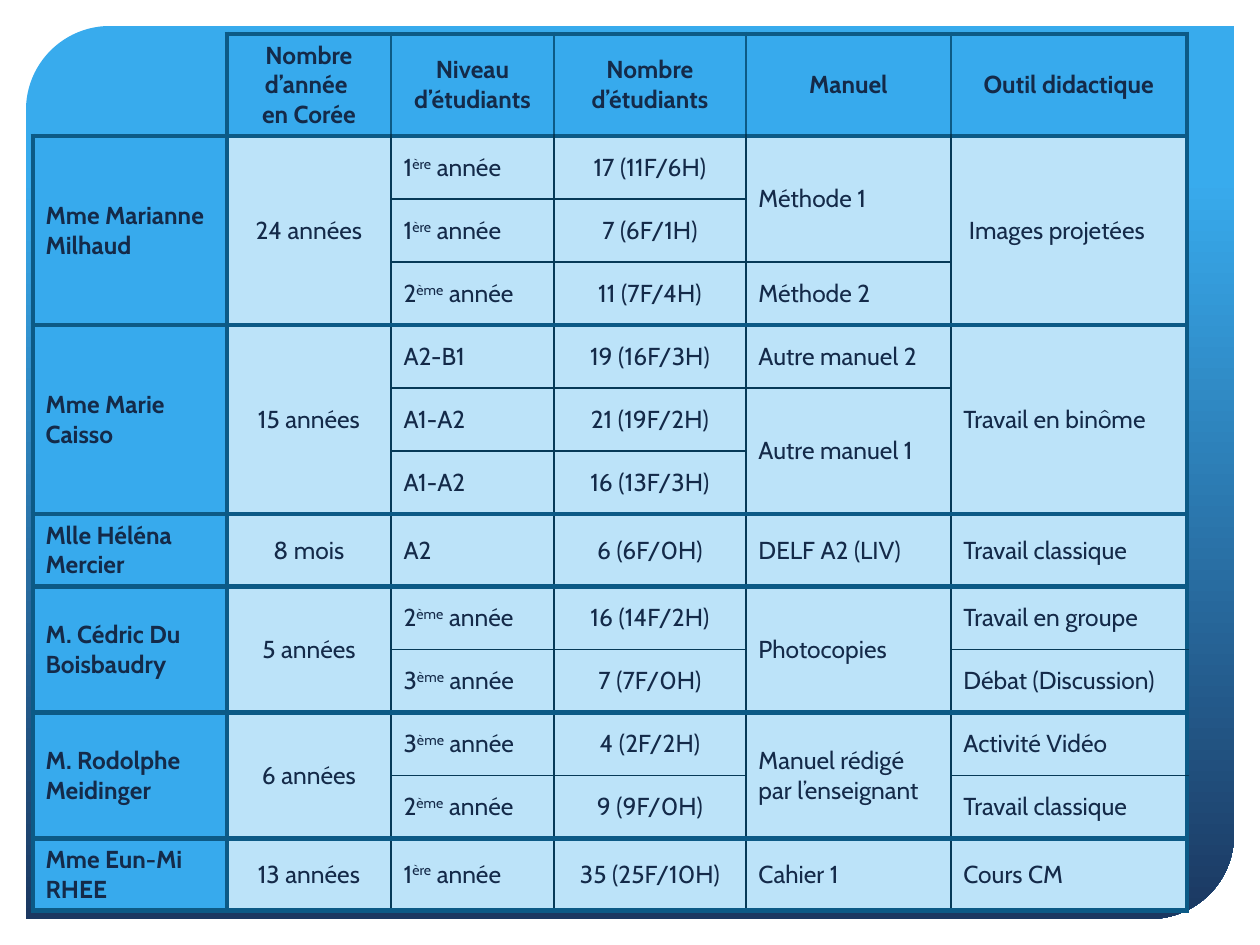
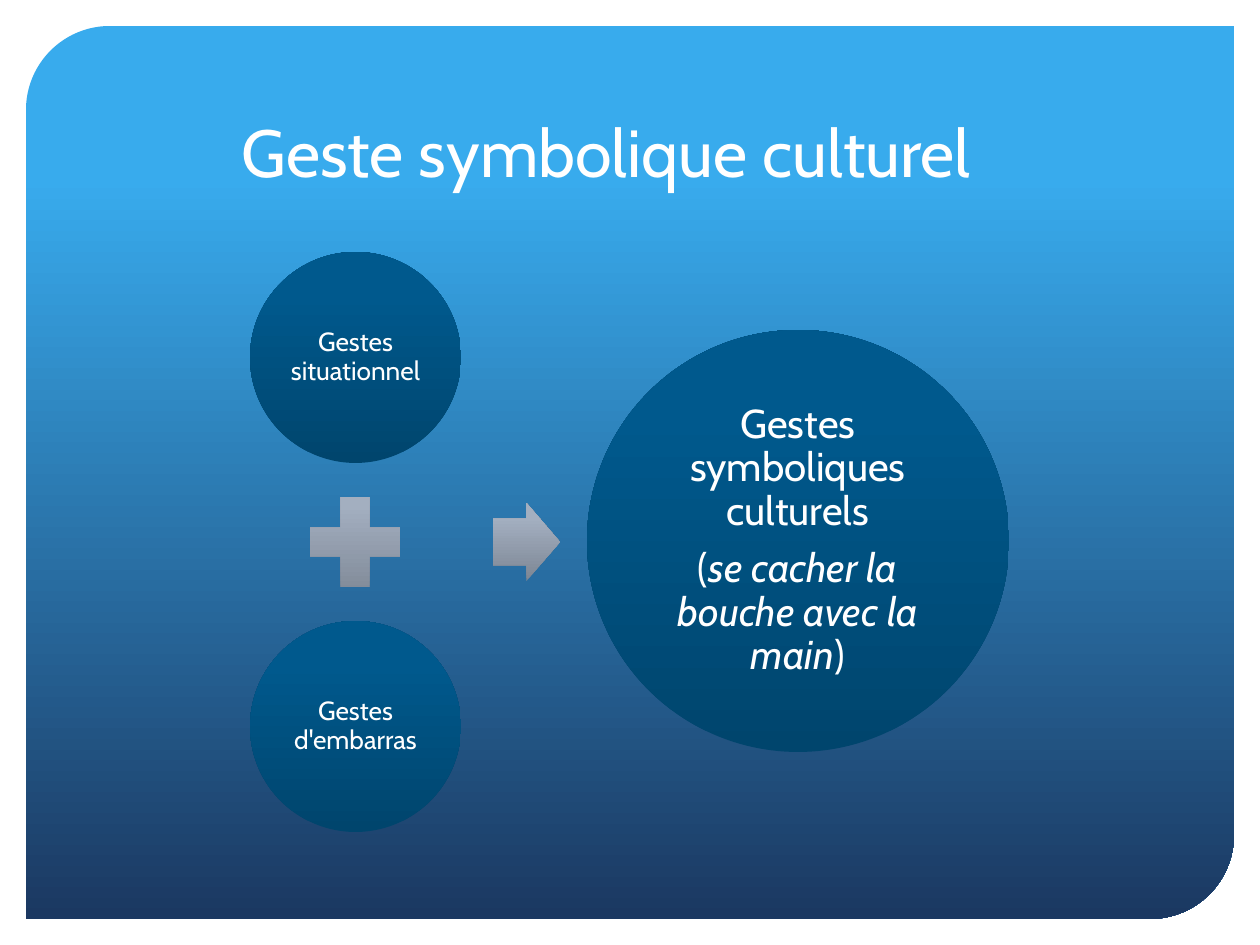
from dataclasses import dataclass
from pptx import Presentation
from pptx.dml.color import RGBColor as Rgb
from pptx.enum.shapes import MSO_SHAPE as Form
from pptx.enum.text import MSO_ANCHOR as Anchor, PP_ALIGN as Align
from pptx.oxml import parse_xml
from pptx.oxml.ns import nsdecls
from pptx.util import Pt

SCALE = 914400 / 126


def px(n):
    return round(n * SCALE)


@dataclass(frozen=True)
class Theme:
    font: str = "Cabin"
    ink: str = "142A49"
    white: str = "FFFFFF"
    thick: tuple = ("0C5A86", 3)
    mid: tuple = ("0C5A86", 1.5)
    thin: tuple = ("063A58", 1)
    head: str = "37AAED"
    body: str = "BCE3F9"
    alpha: int = 45
    # Gradients: angle, then (position, colour) stops
    sky: tuple = (90, (17, "38ABED"), (100, "1B3861"))
    ball: tuple = (270, (0, "00456D"), (80, "00598D"), (100, "005A8E"))
    steel: tuple = (270, (0, "7D8694"), (80, "A3AFC0"), (100, "A3AFC1"))
    title: int = 38
    large: int = 23
    small: int = 15
    cell: int = 14


def write(frame, text, *, font, size, color, bold=False, align=Align.LEFT,
          alt="sup", lead=None, after=0):
    """Lines become paragraphs; parts between | take the alt format."""
    for n, line in enumerate(text.split("\n")):
        para = frame.paragraphs[0] if n == 0 else frame.add_paragraph()
        para.alignment = align
        para.space_after = Pt(after)
        if lead:
            para.line_spacing = lead
        for k, part in enumerate(line.split("|")):
            run = para.add_run()
            run.text = part
            face = run.font
            face.name, face.size, face.bold = font, Pt(size), bold
            face.color.rgb = Rgb.from_string(color)
            if k % 2 and alt == "sup":
                run._r.get_or_add_rPr().set("baseline", "30000")
            elif k % 2:
                face.italic = True


class Deck:
    def __init__(self, theme):
        self.theme = theme
        self.prs = Presentation()
        self.prs.slide_width, self.prs.slide_height = px(1260), px(945)
        self.slide = None

    def page(self):
        self.slide = self.prs.slides.add_slide(self.prs.slide_layouts[6])
        self.shape(Form.ROUND_2_DIAG_RECTANGLE, (26, 26, 1208, 893),
                   self.theme.sky, (0.094, 0))

    def shape(self, form, box, grad, adj=()):
        item = self.slide.shapes.add_shape(form, *map(px, box))
        item.shadow.inherit = False
        item.line.fill.background()
        for n, value in enumerate(adj):
            item.adjustments[n] = value
        angle, *stops = grad
        marks = "".join(f'<a:gs pos="{at * 1000}"><a:srgbClr val="{color}"/></a:gs>'
                        for at, color in stops)
        item._element.spPr.insert(2, parse_xml(
            f'<a:gradFill {nsdecls("a")} rotWithShape="1"><a:gsLst>{marks}</a:gsLst>'
            f'<a:lin ang="{angle * 60000}" scaled="0"/></a:gradFill>'))
        return item

    def title(self, text):
        frame = self.slide.shapes.add_textbox(*map(px, (84, 53, 1045, 144))).text_frame
        frame.word_wrap = True
        frame.vertical_anchor = Anchor.BOTTOM
        write(frame, text, font=self.theme.font, size=self.theme.title,
              color=self.theme.white, align=Align.CENTER)

    def ball(self, box, text, size, inset):
        frame = self.shape(Form.OVAL, box, self.theme.ball).text_frame
        frame.word_wrap = True
        frame.vertical_anchor = Anchor.MIDDLE
        frame.margin_left = frame.margin_right = px(inset)
        frame.margin_top = frame.margin_bottom = px(inset)
        write(frame, text, font=self.theme.font, size=size, color=self.theme.white,
              align=Align.CENTER, alt="italic", lead=0.9, after=round(size * 0.35))

    def edges(self, cell, **lines):
        """Draw the given sides, in the order L, R, T, B; None hides one."""
        props = cell._tc.get_or_add_tcPr()
        for n, side in enumerate("LRTB"):
            line = lines[side]
            width = Pt(line[1]) if line else 0
            paint = (f'<a:solidFill><a:srgbClr val="{line[0]}"/></a:solidFill>'
                     if line else "<a:noFill/>")
            props.insert(n, parse_xml(
                f'<a:ln{side} {nsdecls("a")} w="{width}">{paint}</a:ln{side}>'))

    def tint(self, cell, color):
        cell.fill.solid()
        cell.fill.fore_color.rgb = Rgb.from_string(color)
        shade = cell._tc.tcPr.find(".//{*}srgbClr")
        shade.append(parse_xml(
            f'<a:alpha {nsdecls("a")} val="{self.theme.alpha * 1000}"/>'))

    def table(self, left, top, cols, rows, data):
        """None in the data joins a cell to the one above it."""
        th = self.theme
        grid = self.slide.shapes.add_table(
            len(rows), len(cols), *map(px, (left, top, sum(cols), sum(rows)))).table
        grid.first_row = grid.horz_banding = False
        for n, width in enumerate(cols):
            grid.columns[n].width = px(width)
        for n, height in enumerate(rows):
            grid.rows[n].height = px(height)
        last = len(cols) - 1
        starts = {n for n, row in enumerate(data) if row[0] is not None} | {len(data)}

        def rule(row):
            return th.thick if row in starts else th.thin

        for r, row in enumerate(data):
            for c, text in enumerate(row):
                cell = grid.cell(r, c)
                end = r + 1
                while end < len(data) and data[end][c] is None:
                    end += 1
                inner = th.thin if r else th.mid
                blank = r == c == 0
                self.edges(cell,
                           L=None if blank else th.thick if c < 2 else inner,
                           R=th.thick if c in (0, last) else inner,
                           T=None if blank or text is None else rule(r),
                           B=rule(end))
                if blank:
                    cell.fill.background()
                    continue
                self.tint(cell, th.head if r == 0 or c == 0 else th.body)
                if text is None:
                    continue
                if end > r + 1:
                    cell.merge(grid.cell(end - 1, c))
                cell.vertical_anchor = Anchor.MIDDLE
                mid = r == 0 or c in (1, 3)
                write(cell.text_frame, text, font=th.font, size=th.cell, color=th.ink,
                      bold=r == 0 or c == 0, align=Align.CENTER if mid else Align.LEFT)


FIRST, SECOND, THIRD = "1|ère| année", "2|ème| année", "3|ème| année"
CLASSES = [
    ["", "Nombre d’année \nen Corée", "Niveau d’étudiants", "Nombre d’étudiants",
     "Manuel", "Outil didactique"],
    ["Mme Marianne Milhaud", "24 années", FIRST, "17 (11F/6H)", "Méthode 1",
     " Images projetées"],
    [None, None, FIRST, "7 (6F/1H)", None, None],
    [None, None, SECOND, "11 (7F/4H)", "Méthode 2", None],
    ["Mme Marie Caisso", "15 années", "A2-B1", "19 (16F/3H)", "Autre manuel 2",
     "Travail en binôme"],
    [None, None, "A1-A2", "21 (19F/2H)", "Autre manuel 1", None],
    [None, None, "A1-A2", "16 (13F/3H)", None, None],
    ["Mlle Héléna Mercier", "8 mois", "A2", "6 (6F/0H)", "DELF A2 (LIV)",
     "Travail classique"],
    ["M. Cédric Du Boisbaudry", "5 années", SECOND, "16 (14F/2H)", "Photocopies",
     "Travail en groupe"],
    [None, None, THIRD, "7 (7F/0H)", None, "Débat (Discussion)"],
    ["M. Rodolphe Meidinger", "6 années", THIRD, "4 (2F/2H)",
     "Manuel rédigé par l’enseignant", "Activité Vidéo"],
    [None, None, SECOND, "9 (9F/0H)", None, "Travail classique"],
    ["Mme Eun-Mi RHEE", "13 années", FIRST, "35 (25F/10H)", "Cahier 1", "Cours CM"],
]


def main():
    theme = Theme()
    deck = Deck(theme)

    # Teachers and their classes
    deck.page()
    heights = [98] + [63] * 6 + [71] + [63] * 4 + [71]
    deck.table(33, 34, [194, 164, 163, 192, 205, 236], heights, CLASSES)

    # Two kinds of gesture lead to a third
    deck.page()
    deck.title("Geste symbolique culturel")
    left, top, ball, plus, gap = 250, 252, 211, 122, 18
    mid = top + ball + gap
    deck.ball((left, top, ball, ball), "Gestes situationnel", theme.small, 3)
    deck.shape(Form.MATH_PLUS, (left + (ball - plus) // 2, mid, plus, plus), theme.steel)
    deck.ball((left, mid + plus + gap, ball, ball), "Gestes d'embarras", theme.small, 3)
    deck.shape(Form.RIGHT_ARROW, (493, 503, 67, 78), theme.steel, (0.6, 0.5))
    deck.ball((587, 330, 2 * ball, 2 * ball),
              "Gestes symboliques culturels\n(|se cacher la bouche avec la main|)",
              theme.large, 4)

    deck.prs.save("out.pptx")


if __name__ == "__main__":
    main()
